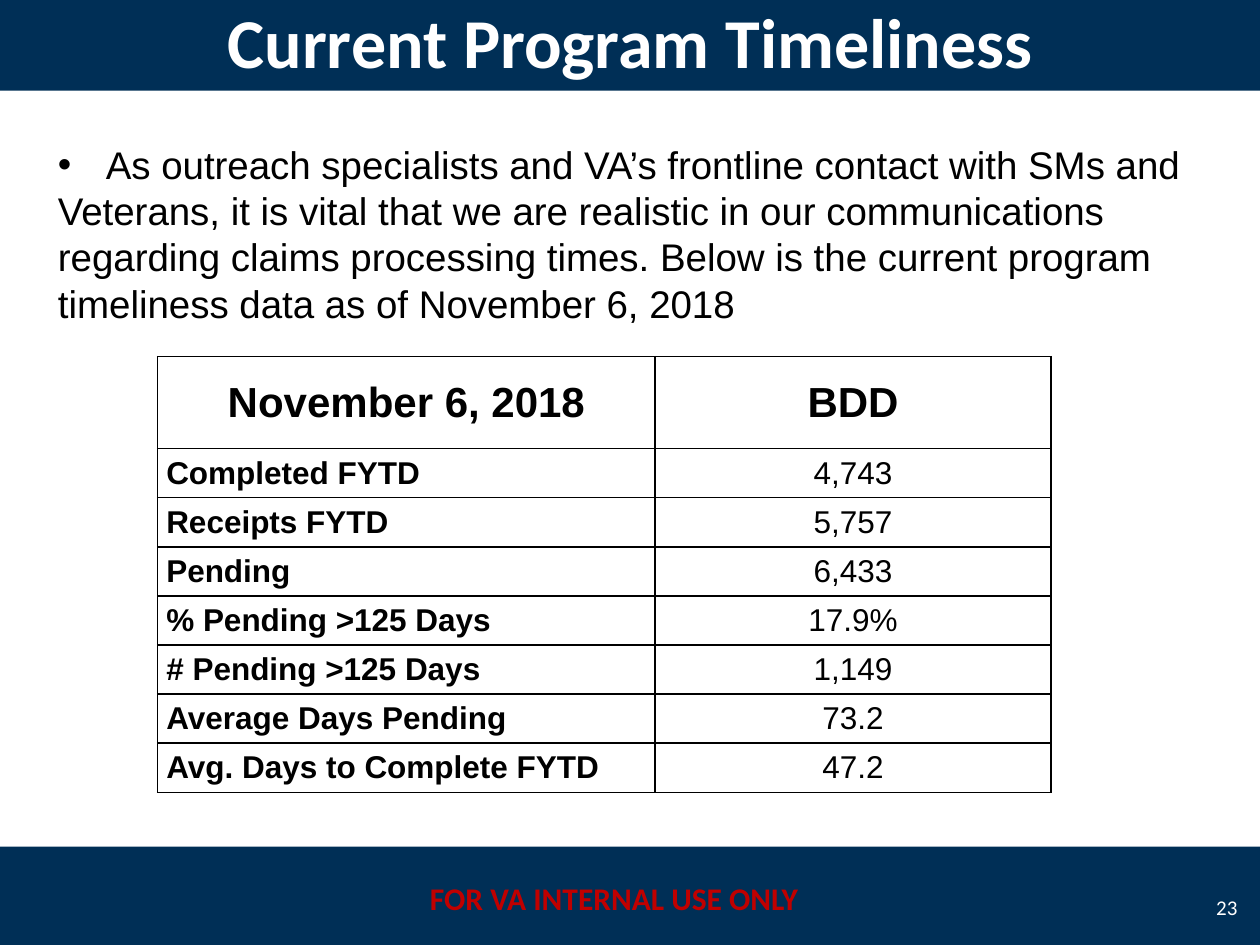
from pptx import Presentation
from pptx.dml.color import RGBColor
from pptx.enum import shapes, text
from pptx.oxml import parse_xml
from pptx.oxml.ns import nsdecls
from pptx.util import Inches, Pt

NAVY = RGBColor(0x00, 0x2F, 0x56)
RED = RGBColor(0xC0, 0x00, 0x00)
WHITE = RGBColor(0xFF, 0xFF, 0xFF)
BLACK = RGBColor(0x00, 0x00, 0x00)
LEFT, CENTER, RIGHT = (text.PP_ALIGN.LEFT, text.PP_ALIGN.CENTER,
                       text.PP_ALIGN.RIGHT)
MIDDLE, TOP = text.MSO_ANCHOR.MIDDLE, text.MSO_ANCHOR.TOP

INTRO = [
    "As outreach specialists and VA’s frontline contact with SMs and",
    "Veterans, it is vital that we are realistic in our communications "
    "regarding claims processing times. Below is the current program "
    "timeliness data as of November 6, 2018",
]
TIMELINESS = [
    ("November 6, 2018", "BDD"),
    ("Completed FYTD", "4,743"),
    ("Receipts FYTD", "5,757"),
    ("Pending", "6,433"),
    ("% Pending >125 Days", "17.9%"),
    ("# Pending >125 Days", "1,149"),
    ("Average Days Pending", "73.2"),
    ("Avg. Days to Complete FYTD", "47.2"),
]


def place(shape, left, top, width, height):
    shape.left, shape.top = Inches(left), Inches(top)
    shape.width, shape.height = Inches(width), Inches(height)


def write(paragraph, words, size=18, font="Arial", color=BLACK, bold=False,
          align=LEFT):
    paragraph.alignment = align
    paragraph.space_before = Pt(0)
    run = paragraph.add_run()
    run.text = words
    run.font.size, run.font.name, run.font.bold = Pt(size), font, bold
    run.font.color.rgb = color


def set_frame(frame, anchor):
    frame.word_wrap = True
    frame.auto_size = text.MSO_AUTO_SIZE.NONE
    frame.vertical_anchor = anchor


def add_band(slide, top):
    """Add a full-width bar behind everything else."""
    band = slide.shapes.add_shape(shapes.MSO_SHAPE.RECTANGLE, 0, Inches(top),
                                  Inches(10), Inches(0.8))
    band.shadow.inherit = False
    band.fill.solid()
    band.fill.fore_color.rgb = NAVY
    band.line.fill.background()
    slide.shapes.element.insert(2, band.element)


def add_label(slide, words, box, anchor=TOP, **style):
    label = slide.shapes.add_textbox(*map(Inches, box))
    set_frame(label.text_frame, anchor)
    write(label.text_frame.paragraphs[0], words, font="Calibri", **style)


def fill_title(title, words):
    place(title, 0, -0.08, 10, 0.8)
    set_frame(title.text_frame, MIDDLE)
    write(title.text_frame.paragraphs[0], words, size=40, font="Calibri",
          color=WHITE, bold=True, align=CENTER)


def set_bullet(paragraph, char=None, indent=0):
    props = paragraph._p.get_or_add_pPr()
    props.set("marL", str(Inches(indent)))
    props.set("indent", str(-Inches(indent)))
    tag = f'a:buChar {nsdecls("a")} char="{char}"' if char else f'a:buNone {nsdecls("a")}'
    props.append(parse_xml(f"<{tag}/>"))


def fill_body(body, paragraphs):
    """Write a bulleted first paragraph and flush ones after it."""
    place(body, 0.36, 1.07, 9.5, 1.58)
    frame = body.text_frame
    set_frame(frame, TOP)
    for index, words in enumerate(paragraphs):
        paragraph = frame.add_paragraph() if index else frame.paragraphs[0]
        write(paragraph, words, size=22)
        if index:
            set_bullet(paragraph)
        else:
            set_bullet(paragraph, "•", 0.38)


def set_borders(cell):
    props = cell._tc.get_or_add_tcPr()
    for index, side in enumerate(("lnL", "lnR", "lnT", "lnB")):
        props.insert(index, parse_xml(
            f'<a:{side} {nsdecls("a")} w="{Pt(1)}"><a:solidFill>'
            f'<a:srgbClr val="{BLACK}"/></a:solidFill></a:{side}>'))


def add_timeliness_table(slide, rows):
    table = slide.shapes.add_table(len(rows), 2, Inches(1.25), Inches(2.83),
                                   Inches(7.09), Inches(3.46)).table
    table.first_row = table.horz_banding = False
    for column, width in zip(table.columns, (3.95, 3.14)):
        column.width = Inches(width)
    for r, row in enumerate(rows):
        header = r == 0
        table.rows[r].height = Inches(0.73 if header else 0.39)
        for c, words in enumerate(row):
            cell = table.cell(r, c)
            cell.fill.background()
            cell.vertical_anchor = MIDDLE
            cell.margin_left = cell.margin_right = Inches(0.07)
            cell.margin_top = cell.margin_bottom = 0
            set_borders(cell)
            write(cell.text_frame.paragraphs[0], words,
                  size=24 if header else 18, bold=header or c == 0,
                  align=CENTER if header or c else LEFT)


def main():
    deck = Presentation()
    deck.slide_width, deck.slide_height = Inches(10), Inches(7.5)
    slide = deck.slides.add_slide(deck.slide_layouts[1])
    for top in (-0.08, 6.72):
        add_band(slide, top)
    fill_title(slide.shapes.title, "Current Program Timeliness")
    fill_body(slide.placeholders[1], INTRO)
    add_label(slide, "FOR VA INTERNAL USE ONLY", (3.25, 6.93, 3.25, 0.4),
              color=RED, bold=True, align=CENTER)
    add_label(slide, "23", (9.5, 7, 0.42, 0.4), anchor=MIDDLE, size=12,
              color=WHITE, align=RIGHT)
    add_timeliness_table(slide, TIMELINESS)
    deck.save("out.pptx")


if __name__ == "__main__":
    main()
